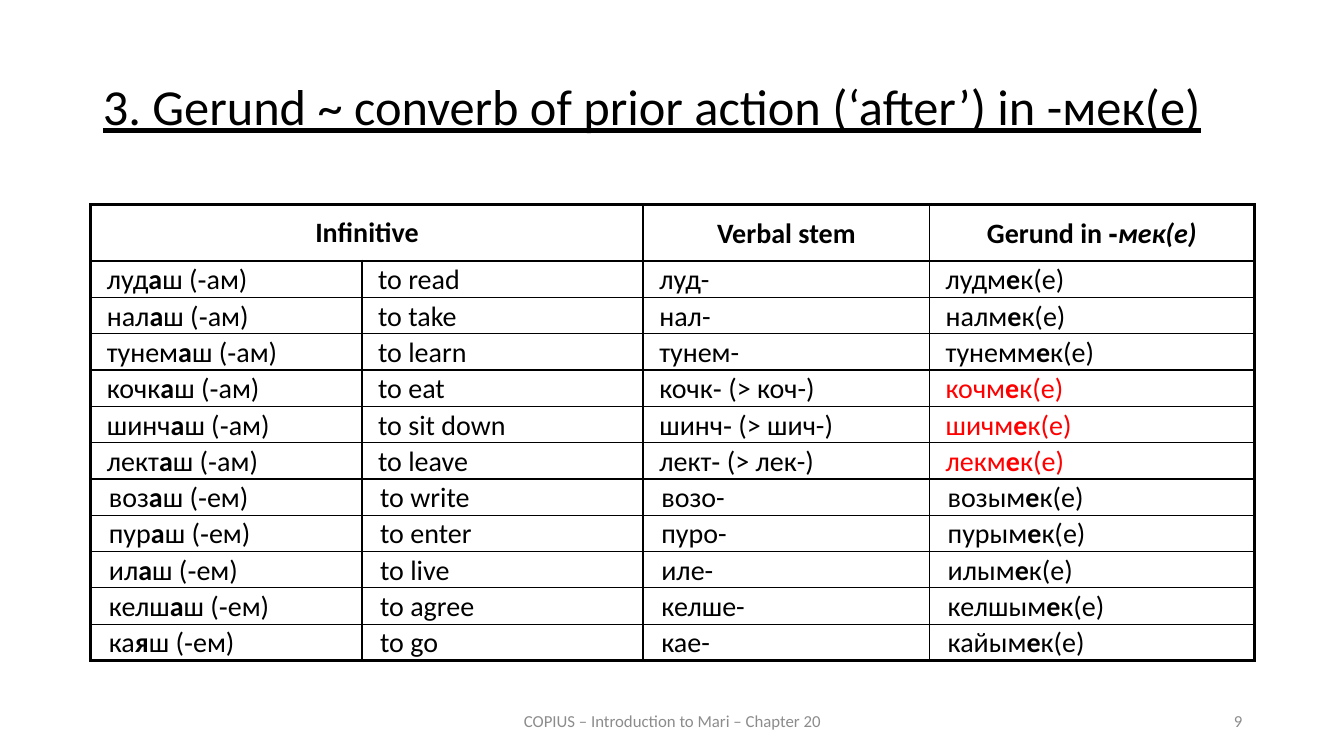
from lxml.etree import SubElement
from pptx import Presentation
from pptx.dml.color import RGBColor
from pptx.enum.text import MSO_ANCHOR, MSO_AUTO_SIZE, PP_ALIGN
from pptx.oxml.ns import qn
from pptx.util import Inches, Pt

FONT = "Calibri"
BLACK, RED, GREY = "000000", "FF0000", "8C8C8C"
THIN, MEDIUM, THICK = 1, 1.5, 2.25

COLUMN_WIDTHS = (2.69, 2.79, 2.84, 3.22)
COLUMN_EDGES = (THICK, THIN, MEDIUM, MEDIUM, THICK)
HEADER_HEIGHT, ROW_HEIGHT = 0.56, 0.36

# Stressed vowels stand between bars.
AM_VERBS = [
    ("луд|а|ш (‑ам)", "to read", "луд-", "лудм|е|к(е)"),
    ("нал|а|ш (‑ам)", "to take", "нал-", "налм|е|к(е)"),
    ("тунем|а|ш (‑ам)", "to learn", "тунем-", "тунемм|е|к(е)"),
    ("кочк|а|ш (‑ам)", "to eat", "кочк‑ (> коч-)", "кочм|е|к(е)"),
    ("шинч|а|ш (‑ам)", "to sit down", "шинч‑ (> шич-)", "шичм|е|к(е)"),
    ("лект|а|ш (‑ам)", "to leave", "лект‑ (> лек-)", "лекм|е|к(е)"),
]
EM_VERBS = [
    ("воз|а|ш (‑ем)", "to write", "возо-", "возым|е|к(е)"),
    ("пур|а|ш (‑ем)", "to enter", "пуро-", "пурым|е|к(е)"),
    ("ил|а|ш (‑ем)", "to live", "иле-", "илым|е|к(е)"),
    ("келш|а|ш (‑ем)", "to agree", "келше-", "келшым|е|к(е)"),
    ("ка|я|ш (‑ем)", "to go", "кае-", "кайым|е|к(е)"),
]
VERBS = AM_VERBS + EM_VERBS
GROUP_ENDS = (0, 1, 1 + len(AM_VERBS), 1 + len(VERBS))


def color(hex_value):
    return RGBColor.from_string(hex_value)


def add_run(paragraph, text, size, hex_value=BLACK, bold=False, italic=False):
    run = paragraph.add_run()
    run.text = text
    font = run.font
    font.name, font.size = FONT, Pt(size)
    font.bold, font.italic = bold, italic
    font.color.rgb = color(hex_value)
    return run


def set_borders(cell, left, right, top, bottom):
    properties = cell._tc.get_or_add_tcPr()
    for tag, width in zip(("a:lnL", "a:lnR", "a:lnT", "a:lnB"), (left, right, top, bottom)):
        line = SubElement(properties, qn(tag), w=str(Pt(width)))
        fill = SubElement(line, qn("a:solidFill"))
        SubElement(fill, qn("a:srgbClr"), val=BLACK)


def set_margins(cell, side, top=0.02, bottom=0):
    cell.margin_left = cell.margin_right = Inches(side)
    cell.margin_top, cell.margin_bottom = Inches(top), Inches(bottom)


def format_grid(table):
    """Set sizes, borders, margins and clear fills of all cells."""
    for column, width in zip(table.columns, COLUMN_WIDTHS):
        column.width = Inches(width)
    for row_index, row in enumerate(table.rows):
        row.height = Inches(ROW_HEIGHT if row_index else HEADER_HEIGHT)
        top, bottom = (THICK if edge in GROUP_ENDS else THIN
                       for edge in (row_index, row_index + 1))
        for column_index, cell in enumerate(row.cells):
            left, right = COLUMN_EDGES[column_index:column_index + 2]
            set_borders(cell, left, right, top, bottom)
            cell.fill.background()
            set_margins(cell, 0.16 if row_index <= len(AM_VERBS) else 0.18)


def fill_header(table):
    table.cell(0, 0).merge(table.cell(0, 1))
    set_margins(table.cell(0, 0), 0.22, 0.11, 0.11)
    for column_index, text in ((0, "Infinitive"), (2, "Verbal stem"), (3, "Gerund in ‑")):
        cell = table.cell(0, column_index)
        cell.vertical_anchor = MSO_ANCHOR.MIDDLE
        paragraph = cell.text_frame.paragraphs[0]
        paragraph.alignment = PP_ALIGN.CENTER
        add_run(paragraph, text, 20, bold=True)
    add_run(paragraph, "мек(е)", 20, bold=True, italic=True)


def add_verb_table(slide, left, top):
    height = HEADER_HEIGHT + ROW_HEIGHT * len(VERBS)
    table = slide.shapes.add_table(
        len(VERBS) + 1, len(COLUMN_WIDTHS), Inches(left), Inches(top),
        Inches(sum(COLUMN_WIDTHS)), Inches(height)).table
    table.first_row = table.horz_banding = False
    format_grid(table)
    fill_header(table)
    for row_index, verb in enumerate(VERBS, start=1):
        shortened = ">" in verb[2]
        for column_index, text in enumerate(verb):
            paragraph = table.cell(row_index, column_index).text_frame.paragraphs[0]
            paragraph.alignment = PP_ALIGN.JUSTIFY
            hex_value = RED if shortened and column_index == 3 else BLACK
            for part_index, part in enumerate(text.split("|")):
                add_run(paragraph, part, 20, hex_value, bold=part_index == 1)


def add_title(slide, left, top, width, height):
    title = slide.shapes.title
    title.left, title.top = Inches(left), Inches(top)
    title.width, title.height = Inches(width), Inches(height)
    frame = title.text_frame
    frame.auto_size = MSO_AUTO_SIZE.NONE
    frame.vertical_anchor = MSO_ANCHOR.TOP
    paragraph = frame.paragraphs[0]
    paragraph.alignment = PP_ALIGN.JUSTIFY
    paragraph.line_spacing = 0.9
    run = add_run(paragraph, "3. Gerund ~ converb of prior action (‘after’) in -мек(е)", 36)
    run.font.underline = True


def add_footer_text(slide, text, alignment, left, top, width, height):
    box = slide.shapes.add_textbox(Inches(left), Inches(top), Inches(width), Inches(height))
    frame = box.text_frame
    frame.word_wrap = True
    frame.vertical_anchor = MSO_ANCHOR.MIDDLE
    paragraph = frame.paragraphs[0]
    paragraph.alignment = alignment
    add_run(paragraph, text, 12, GREY)


def main():
    presentation = Presentation()
    presentation.slide_width, presentation.slide_height = Inches(13.33), Inches(7.5)
    slide = presentation.slides.add_slide(presentation.slide_layouts.get_by_name("Title Only"))
    add_title(slide, 0.92, 0.76, 11.5, 0.83)
    add_verb_table(slide, 0.9, 2.03)
    add_footer_text(slide, "COPIUS – Introduction to Mari – Chapter 20",
                    PP_ALIGN.CENTER, 4.42, 6.95, 4.5, 0.4)
    add_footer_text(slide, "9", PP_ALIGN.RIGHT, 9.42, 6.95, 3, 0.4)
    presentation.save("out.pptx")


if __name__ == "__main__":
    main()
